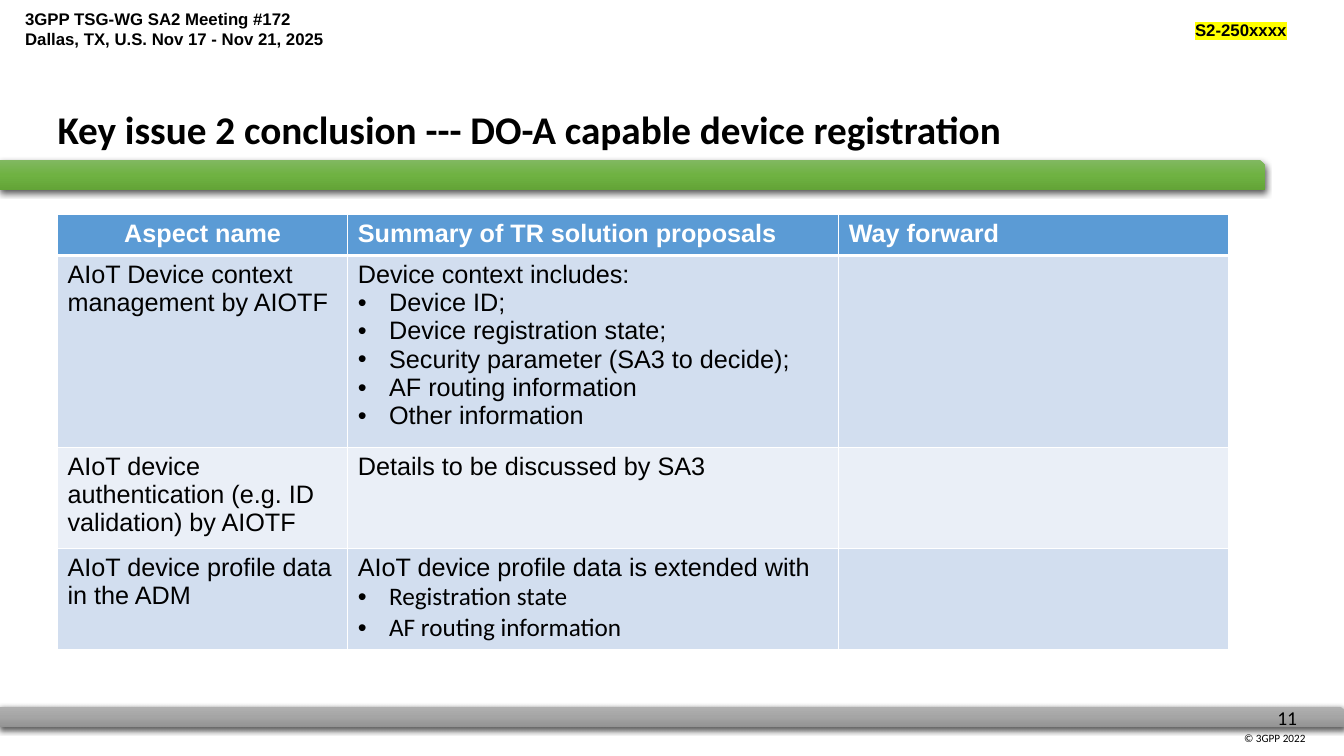
from lxml import etree
from pptx import Presentation
from pptx.dml.color import RGBColor
from pptx.enum.shapes import MSO_SHAPE
from pptx.enum.text import MSO_ANCHOR, MSO_AUTO_SIZE, PP_ALIGN
from pptx.oxml.ns import qn
from pptx.util import Inches, Pt

SNIP = MSO_SHAPE.SNIP_1_RECTANGLE
MIDDLE = MSO_ANCHOR.MIDDLE
FIXED, GROW = MSO_AUTO_SIZE.NONE, MSO_AUTO_SIZE.SHAPE_TO_FIT_TEXT
LEFT, CENTER, RIGHT = PP_ALIGN.LEFT, PP_ALIGN.CENTER, PP_ALIGN.RIGHT
JUSTIFY = PP_ALIGN.JUSTIFY

INK = {
    "text": "000000", "white": "FFFFFF", "mark": "FFFF00",
    "head": "5B9BD5", "odd": "D2DEEF", "even": "EAEFF7",
}
BARS = [  # place, gradient from top to bottom
    ((0, 93.47, 100, 2.67), ("AFAFAF", "A5A5A5", "939393")),
    ((0, 21.2, 94.15, 4), ("81B861", "6FB242", "62A336")),
]
NOTES = [  # place, lines, size, font, bold, alignment, wrap
    ((91.82, 96.13, 8.1, 3.07), ["© 3GPP 2022"], 8, "Calibri", False, LEFT, True),
    ((94.3, 92.67, 3.23, 4.53), ["11"], 14, "Calibri", False, LEFT, False),
    ((1.13, 0.53, 31.58, 6.67),
     ["3GPP TSG-WG SA2 Meeting #172", "Dallas, TX, U.S. Nov 17 - Nov 21, 2025"],
     12, "Arial", True, LEFT, True),
    ((75.17, 2, 21.3, 4), ["S2-250xxxx"], 12, "Arial", True, RIGHT, True),
]
COLS = [21.6, 36.53, 29.03]
ROWS = [5.4, 25.4, 13.35, 13.4]
# Lines that start with a bullet become list items
CELLS = [
    [["Aspect name"], ["Summary of TR solution proposals"], ["Way forward"]],
    [["AIoT Device context management by AIOTF"],
     ["Device context includes:", "•Device ID;", "•Device registration state;",
      "•Security parameter (SA3 to decide);", "•AF routing information",
      "•Other information"], []],
    [["AIoT device authentication (e.g. ID validation) by AIOTF"],
     ["Details to be discussed by SA3"], []],
    [["AIoT device profile data in the ADM"],
     ["AIoT device profile data is extended with", "•Registration state",
      "•AF routing information"], []],
]

deck = Presentation()
deck.slide_width, deck.slide_height = Inches(13.33), Inches(7.5)
slide = deck.slides.add_slide(deck.slide_layouts[5])
shapes = slide.shapes


def place(x, y, w, h):
    """Turn percent of the slide into lengths."""
    wide, high = deck.slide_width / 100, deck.slide_height / 100
    return [int(n) for n in (x * wide, y * high, w * wide, h * high)]


def write(para, text, size, face, ink, bold=False):
    run = para.add_run()
    run.text = text
    font = run.font
    font.size, font.name, font.bold = Pt(size), face, bold
    font.color.rgb = RGBColor.from_string(INK[ink])
    return run


# Shaded bars
for spot, tones in BARS:
    bar = shapes.add_shape(SNIP, *place(*spot))
    bar.line.fill.background()
    bar.fill.gradient()
    bar.fill.gradient_angle = 270
    stops = bar._element.spPr.find(".//" + qn("a:gsLst"))
    stops.clear()
    for i, tone in enumerate(tones):
        stop = etree.SubElement(stops, qn("a:gs"), pos=str(i * 50000))
        etree.SubElement(stop, qn("a:srgbClr"), val=tone)
    bar.shadow.inherit = False
    glow = etree.SubElement(
        bar._element.spPr.find(qn("a:effectLst")), qn("a:outerShdw"),
        blurRad=str(Pt(4.5)), dist=str(Pt(1.5)), dir="5400000",
        algn="ctr", rotWithShape="0")
    shade = etree.SubElement(glow, qn("a:srgbClr"), val=INK["text"])
    etree.SubElement(shade, qn("a:alpha"), val="63000")

# Header and footer notes
for spot, lines, size, face, bold, align, wrap in NOTES:
    box = shapes.add_textbox(*place(*spot))
    frame = box.text_frame
    frame.word_wrap, frame.auto_size = wrap, GROW
    for i, line in enumerate(lines):
        para = frame.add_paragraph() if i else frame.paragraphs[0]
        para.alignment = align
        run = write(para, line, size, face, "text", bold)

# Highlight on the document number, the last note
mark = etree.Element(qn("a:highlight"))
etree.SubElement(mark, qn("a:srgbClr"), val=INK["mark"])
run._r.rPr.find(qn("a:latin")).addprevious(mark)

# Title
title = shapes.title
title.left, title.top, title.width, title.height = place(4.28, 13.47, 73.6, 6.93)
frame = title.text_frame
frame.margin_left = frame.margin_right = frame.margin_top = frame.margin_bottom = 0
frame.word_wrap, frame.auto_size, frame.vertical_anchor = True, FIXED, MIDDLE
para = frame.paragraphs[0]
para.alignment, para.line_spacing = JUSTIFY, Pt(34.3)
write(para, "Key issue 2 conclusion --- DO-A capable device registration",
      28, "Calibri", "text", True)

# Table grid
spot = place(4.28, 28.4, sum(COLS), sum(ROWS))
table = shapes.add_table(len(ROWS), len(COLS), *spot).table
for col, share in zip(table.columns, COLS):
    col.width = int(deck.slide_width * share / 100)
for row, share in zip(table.rows, ROWS):
    row.height = int(deck.slide_height * share / 100)

# Table cells
for r, row in enumerate(CELLS):
    tone = "head" if r == 0 else "odd" if r % 2 else "even"
    for c, lines in enumerate(row):
        cell = table.cell(r, c)
        for side in ("L", "R", "T", "B"):
            thick = (r == 0 and side == "B") or (r == 1 and side == "T")
            edge = etree.SubElement(cell._tc.get_or_add_tcPr(), qn("a:ln" + side),
                                    w=str(Pt(3 if thick else 1)))
            paint = etree.SubElement(edge, qn("a:solidFill"))
            etree.SubElement(paint, qn("a:srgbClr"), val=INK["white"])
        cell.fill.solid()
        cell.fill.fore_color.rgb = RGBColor.from_string(INK[tone])
        frame = cell.text_frame
        for i, line in enumerate(lines):
            para = frame.add_paragraph() if i else frame.paragraphs[0]
            para.alignment = CENTER if r == c == 0 else LEFT
            item = line.startswith("•")
            if item:
                props = para._p.get_or_add_pPr()
                props.set("marL", str(Inches(0.31)))
                props.set("indent", str(-Inches(0.31)))
                etree.SubElement(props, qn("a:buFont"), typeface="Arial")
                etree.SubElement(props, qn("a:buChar"), char="•")
            face = "Calibri" if item and r == 3 else "Arial"
            write(para, line.lstrip("•"), 18, face,
                  "text" if r else "white", r == 0)

deck.save("out.pptx")
